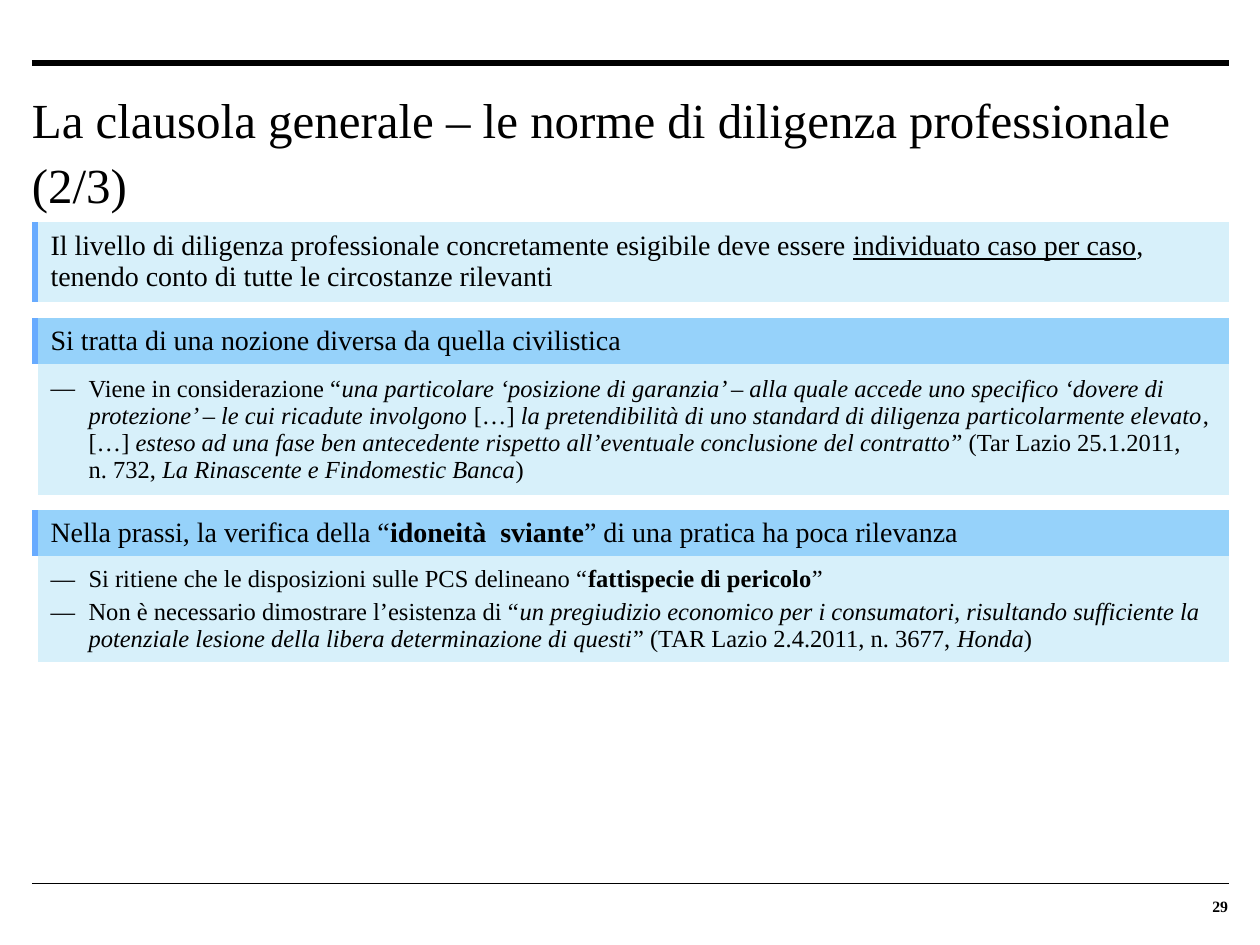
from dataclasses import dataclass

from lxml.etree import SubElement
from pptx import Presentation
from pptx.dml.color import RGBColor as Rgb
from pptx.enum.shapes import MSO_CONNECTOR as Conn
from pptx.enum.text import MSO_ANCHOR as Anchor, PP_ALIGN as Align
from pptx.oxml.ns import qn
from pptx.util import Pt

PX = 914400 / 126
LEFT, WIDE, BAR = 32, 1197, 6
PLAIN = "{2D5ABB26-0587-4C30-8999-92F81FD0307C}"


@dataclass(frozen=True)
class Theme:
    font: str = "Times New Roman"
    ink: str = "000000"
    bar: str = "68ABFF"
    head: str = "96D2FA"
    body: str = "D7F0FA"
    title: int = 28
    lead: int = 16
    item: int = 14
    page: int = 9


THEME = Theme()

# Each run is (text, style): "" plain, "b" bold, "i" italic, "u" underlined.
LEVEL = [
    ("Il livello di diligenza professionale concretamente esigibile deve essere ", ""),
    ("individuato caso per caso", "u"),
    (", tenendo conto di tutte le circostanze rilevanti", ""),
]
NOTION = [("Si tratta di una nozione diversa da quella civilistica", "")]
DUTY = [
    ("Viene in considerazione “", ""),
    ("una particolare ‘posizione di garanzia’ – alla quale accede uno specifico "
     "‘dovere di protezione’ – le cui ricadute involgono ", "i"),
    ("[…] ", ""),
    ("la pretendibilità di uno standard di diligenza particolarmente elevato", "i"),
    (", […] ", ""),
    ("esteso ad una fase ben antecedente rispetto all’eventuale conclusione "
     "del contratto", "i"),
    ("” (Tar Lazio 25.1.2011, \nn. 732, ", ""),
    ("La Rinascente e Findomestic Banca", "i"),
    (")", ""),
]
CASES = [
    ("Nella prassi, la verifica della “", ""),
    ("idoneità  sviante", "b"),
    ("” di una pratica ha poca rilevanza", ""),
]
DANGER = [
    ("Si ritiene che le disposizioni sulle PCS delineano “", ""),
    ("fattispecie di pericolo", "b"),
    ("”", ""),
]
HARM = [
    ("Non è necessario dimostrare l’esistenza di “", ""),
    ("un pregiudizio economico per i consumatori, risultando sufficiente la "
     "potenziale lesione della libera determinazione di questi", "i"),
    ("” (TAR Lazio 2.4.2011, n. 3677, ", ""),
    ("Honda", "i"),
    (")", ""),
]


def px(num):
    return round(num * PX)


def paint(cell, color):
    cell.fill.solid()
    cell.fill.fore_color.rgb = Rgb.from_string(color)


def write(para, runs, size):
    """Add styled runs; a newline in a run becomes a line break."""
    for text, style in runs:
        for num, part in enumerate(text.split("\n")):
            if num:
                para.add_line_break()
            run = para.add_run()
            run.text = part
            font = run.font
            font.name, font.size = THEME.font, Pt(size)
            font.color.rgb = Rgb.from_string(THEME.ink)
            font.bold, font.italic = style == "b", style == "i"
            font.underline = style == "u"


def dash(para):
    """Give the paragraph a hanging dash bullet."""
    props = para._p.get_or_add_pPr()
    props.set("marL", str(px(38)))
    props.set("indent", str(-px(38)))
    SubElement(props, qn("a:buFont"), typeface=THEME.font)
    SubElement(props, qn("a:buChar"), char="—")
    para.space_after = Pt(3)


def add_text(slide, box, runs, size, anchor=Anchor.TOP):
    frame = slide.shapes.add_textbox(*map(px, box)).text_frame
    frame.word_wrap = True
    frame.vertical_anchor = anchor
    frame.margin_left = frame.margin_right = 0
    frame.margin_top = frame.margin_bottom = 0
    para = frame.paragraphs[0]
    write(para, runs, size)
    return para


def add_rule(slide, top, width):
    rule = slide.shapes.add_connector(
        Conn.STRAIGHT, px(LEFT), px(top), px(LEFT + WIDE), px(top))
    rule.line.color.rgb = Rgb.from_string(THEME.ink)
    rule.line.width = Pt(width)
    SubElement(rule._element.spPr, qn("a:effectLst"))


def add_block(slide, top, rows, lead, items=()):
    """Add a barred heading row and, if there are items, a row of bullets."""
    table = slide.shapes.add_table(
        len(rows), 2, px(LEFT), px(top), px(WIDE), px(sum(rows))).table
    table.first_row = table.horz_banding = False
    table._tbl.tblPr.find(qn("a:tableStyleId")).text = PLAIN
    for col, width in zip(table.columns, (BAR, WIDE - BAR)):
        col.width = px(width)
    for num, height in enumerate(rows):
        table.rows[num].height = px(height)
        side, main = table.cell(num, 0), table.cell(num, 1)
        side.margin_left = side.margin_right = 0
        side.margin_top = side.margin_bottom = 0
        side.fill.background()
        main.vertical_anchor = Anchor.MIDDLE
        paint(main, THEME.body)
    paint(table.cell(0, 0), THEME.bar)
    head = table.cell(0, 1)
    write(head.text_frame.paragraphs[0], lead, THEME.lead)
    if items:
        paint(head, THEME.head)
        frame = table.cell(1, 1).text_frame
        for num, runs in enumerate(items):
            para = frame.add_paragraph() if num else frame.paragraphs[0]
            dash(para)
            write(para, runs, THEME.item)


def main():
    deck = Presentation()
    deck.slide_width, deck.slide_height = px(1260), px(945)
    slide = deck.slides.add_slide(deck.slide_layouts[6])
    add_rule(slide, 63, 3)
    add_rule(slide, 883, 0.5)
    page = add_text(slide, (1144, 887, 84, 29), [("29", "b")],
                    THEME.page, Anchor.BOTTOM)
    page.alignment = Align.RIGHT
    title = add_text(
        slide, (LEFT, 84, WIDE, 125),
        [("La clausola generale – le norme di diligenza professionale (2/3)", "")],
        THEME.title)
    title.line_spacing = 1.1
    add_block(slide, 222, [75], LEVEL)
    add_block(slide, 318, [44, 121], NOTION, [DUTY])
    add_block(slide, 510, [44, 99], CASES, [DANGER, HARM])
    deck.save("out.pptx")


if __name__ == "__main__":
    main()
